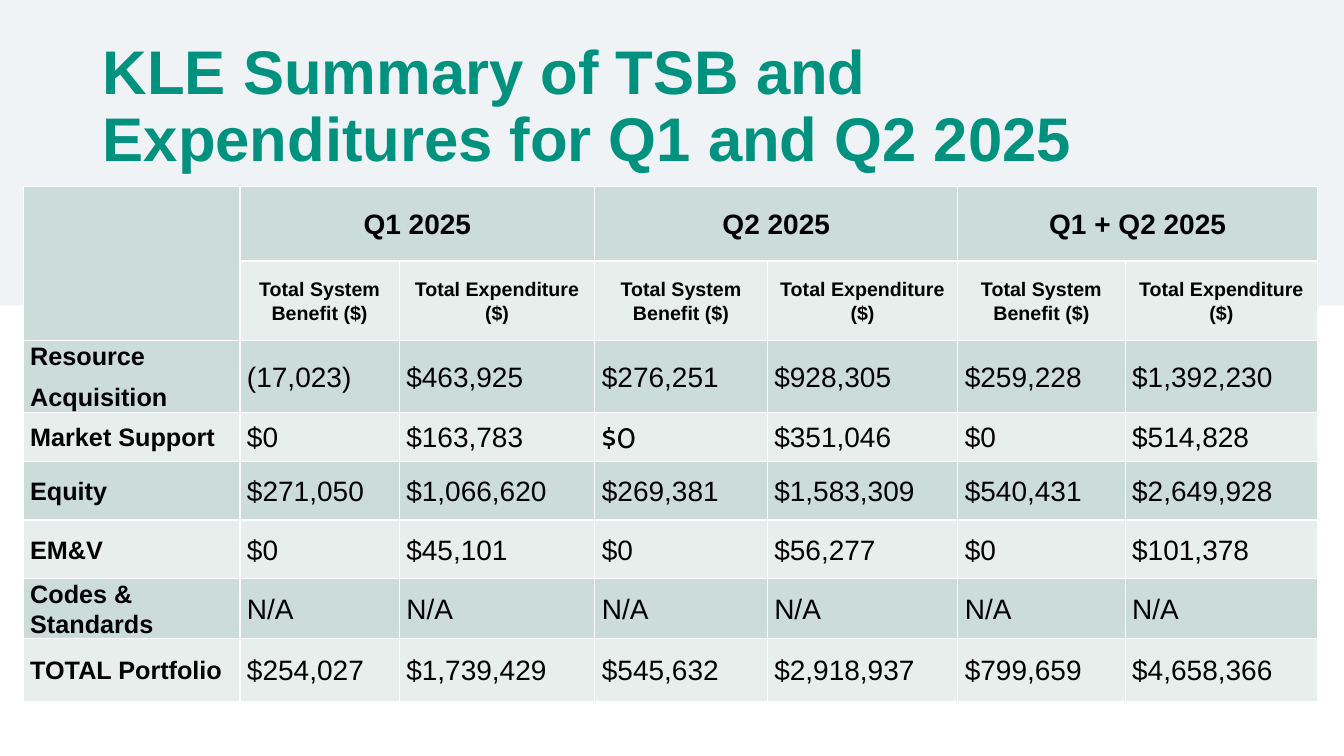
from lxml import etree
from pptx import Presentation
from pptx.dml.color import RGBColor
from pptx.enum import shapes, text
from pptx.oxml.ns import qn
from pptx.util import Inches, Pt

TEAL = RGBColor(0x00, 0x92, 0x7E)
MIST = RGBColor(0xEF, 0xF3, 0xF5)
SAGE = RGBColor(0xCC, 0xDC, 0xD8)
PALE = RGBColor(0xE7, 0xEE, 0xEC)
BLACK = RGBColor(0x00, 0x00, 0x00)
WHITE = RGBColor(0xFF, 0xFF, 0xFF)

COLS = [2.15, 1.58, 1.94, 1.71, 1.89, 1.66, 1.91]
ROWS = [0.74, 0.79, 0.6, 0.49, 0.58, 0.58, 0.47, 0.62]
DATA = [
    ["", "Q1 2025", "", "Q2 2025", "", "Q1 + Q2 2025", ""],
    [""] + ["Total System Benefit ($)", "Total Expenditure ($)"] * 3,
    ["Resource \nAcquisition", "(17,023)", "$463,925", "$276,251",
     "$928,305", "$259,228", "$1,392,230"],
    ["Market Support", "$0", "$163,783", "$0", "$351,046", "$0", "$514,828"],
    ["Equity", "$271,050", "$1,066,620", "$269,381", "$1,583,309",
     "$540,431", "$2,649,928"],
    ["EM&V", "$0", "$45,101", "$0", "$56,277", "$0", "$101,378"],
    ["Codes & Standards"] + ["N/A"] * 6,
    ["TOTAL Portfolio", "$254,027", "$1,739,429", "$545,632", "$2,918,937",
     "$799,659", "$4,658,366"],
]


def style(font, size, color, bold, name="Arial"):
    font.name, font.size, font.bold = name, Pt(size), bold
    font.color.rgb = color


def border(cell):
    props = cell._tc.get_or_add_tcPr()
    for i, side in enumerate(("a:lnL", "a:lnR", "a:lnT", "a:lnB")):
        line = etree.Element(qn(side), w=str(Pt(1)))
        fill = etree.SubElement(line, qn("a:solidFill"))
        etree.SubElement(fill, qn("a:srgbClr"), val=str(WHITE))
        props.insert(i, line)


deck = Presentation()
deck.slide_width, deck.slide_height = Inches(13.33), Inches(7.5)
slide = deck.slides.add_slide(deck.slide_layouts[5])

# Band behind the title
band = slide.shapes.add_shape(shapes.MSO_SHAPE.RECTANGLE, 0, 0,
                              deck.slide_width, Inches(3.03))
band.shadow.inherit = False
band.fill.solid()
band.fill.fore_color.rgb = MIST
band.line.fill.background()
slide.shapes._spTree.insert(2, band._element)

# Title
title = slide.shapes.title
title.left, title.top = Inches(0.92), Inches(0.36)
title.width, title.height = Inches(10.92), Inches(0.7)
frame = title.text_frame
frame.text = "KLE Summary of TSB and Expenditures for Q1 and Q2 2025"
frame.word_wrap = True
frame.auto_size = text.MSO_AUTO_SIZE.NONE
frame.vertical_anchor = text.MSO_ANCHOR.TOP
head = frame.paragraphs[0]
head.alignment = text.PP_ALIGN.LEFT
head.line_spacing = 0.9
head.space_before = Pt(10)
style(head.font, 44, TEAL, True)

# Table grid
table = slide.shapes.add_table(len(ROWS), len(COLS), Inches(0.23), Inches(1.85),
                               Inches(sum(COLS)), Inches(sum(ROWS))).table
for col, width in zip(table.columns, COLS):
    col.width = Inches(width)
for row, height in zip(table.rows, ROWS):
    row.height = Inches(height)
table.cell(0, 0).merge(table.cell(1, 0))
for c in (1, 3, 5):
    table.cell(0, c).merge(table.cell(0, c + 1))

# Table cells
for r, row in enumerate(DATA):
    for c, words in enumerate(row):
        cell = table.cell(r, c)
        cell.fill.solid()
        cell.fill.fore_color.rgb = PALE if r % 2 else SAGE
        border(cell)
        cell.vertical_anchor = text.MSO_ANCHOR.MIDDLE
        cell.margin_left = cell.margin_right = Inches(0.07)
        cell.margin_top = cell.margin_bottom = 0
        if not words:
            continue
        cell.text = words
        size = 14 if r == 1 else 18 if c == 0 else 20
        face = "Cabin" if (r, c) == (3, 3) else "Arial"
        for para in cell.text_frame.paragraphs:
            para.line_spacing = 1.07
            para.space_after = Pt(8)
            if r < 2:
                para.alignment = text.PP_ALIGN.CENTER
            style(para.font, size, BLACK, r < 2 or c == 0, face)

deck.save("out.pptx")
